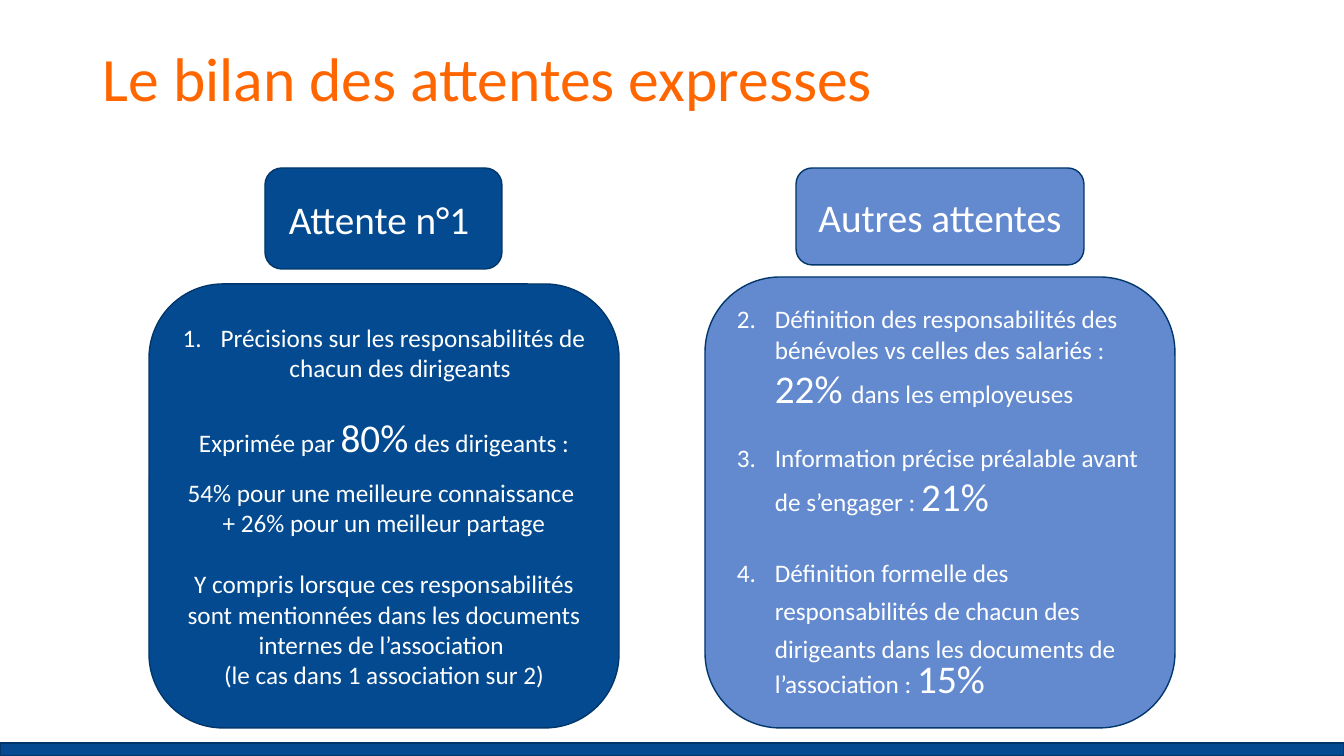
from dataclasses import dataclass

from lxml import etree
from pptx import Presentation
from pptx.dml.color import RGBColor
from pptx.enum.shapes import MSO_SHAPE
from pptx.enum.text import MSO_ANCHOR, PP_ALIGN
from pptx.oxml.ns import qn
from pptx.shapes.autoshape import Shape
from pptx.slide import Slide
from pptx.text.text import TextFrame
from pptx.util import Emu, Pt

EMU_PER_PX = 914400 / 100.8
RECT, ROUNDED = MSO_SHAPE.RECTANGLE, MSO_SHAPE.ROUNDED_RECTANGLE
LEFT, CENTER = PP_ALIGN.LEFT, PP_ALIGN.CENTER
MIDDLE = MSO_ANCHOR.MIDDLE

NAVY = RGBColor(0x03, 0x4A, 0x90)
OUTLINE = RGBColor(0x02, 0x37, 0x6B)
SKY = RGBColor(0x63, 0x8A, 0xCF)
ORANGE = RGBColor(0xFF, 0x66, 0x00)
WHITE = RGBColor(0xFF, 0xFF, 0xFF)

FONT = "Calibri"
BODY, LARGE, TITLE = 18, 28, 44
GAP, SMALL_GAP = 22, 12
NUMBER_INDENT = 38


@dataclass(frozen=True)
class Box:
    left: int
    top: int
    width: int
    height: int


@dataclass(frozen=True)
class Para:
    runs: tuple[tuple[str, int], ...]
    align: PP_ALIGN = CENTER
    before: int = 0
    spacing: float | Pt | None = None
    start: int = 0  # first number of the list, 0 for plain text


@dataclass(frozen=True)
class Panel:
    box: Box
    fill: RGBColor
    paras: tuple[Para, ...] = ()
    kind: MSO_SHAPE = ROUNDED


def px(length: int) -> Emu:
    return Emu(round(length * EMU_PER_PX))


def place(box: Box) -> tuple[Emu, Emu, Emu, Emu]:
    return px(box.left), px(box.top), px(box.width), px(box.height)


def number(paragraph, start: int) -> None:
    """Turn a paragraph into an item of a numbered list."""
    properties = paragraph._p.get_or_add_pPr()
    properties.set("marL", str(px(NUMBER_INDENT)))
    properties.set("indent", str(-px(NUMBER_INDENT)))
    bullet = etree.SubElement(properties, qn("a:buAutoNum"))
    bullet.set("type", "arabicPeriod")
    bullet.set("startAt", str(start))


def write(frame: TextFrame, paras: tuple[Para, ...], color: RGBColor) -> None:
    frame.word_wrap = True
    frame.vertical_anchor = MIDDLE
    for index, para in enumerate(paras):
        paragraph = frame.add_paragraph() if index else frame.paragraphs[0]
        layout = {"alignment": para.align, "space_before": Pt(para.before),
                  "line_spacing": para.spacing}
        for name, value in layout.items():
            setattr(paragraph, name, value)
        if para.start:
            number(paragraph, para.start)
        for text, size in para.runs:
            run = paragraph.add_run()
            run.text = text
            for name, value in {"name": FONT, "size": Pt(size)}.items():
                setattr(run.font, name, value)
            run.font.color.rgb = color


def draw_panel(slide: Slide, panel: Panel) -> Shape:
    shape = slide.shapes.add_shape(panel.kind, *place(panel.box))
    shape.shadow.inherit = False
    shape.fill.solid()
    shape.fill.fore_color.rgb = panel.fill
    shape.line.color.rgb = OUTLINE
    shape.line.width = Pt(1)
    write(shape.text_frame, panel.paras, WHITE)
    return shape


def draw_title(slide: Slide, box: Box, text: str) -> None:
    title = slide.shapes.add_textbox(*place(box))
    write(title.text_frame, (Para(((text, TITLE),), LEFT, spacing=0.9),), ORANGE)


FIRST_EXPECTATION = (
    Para((("Précisions sur les responsabilités de chacun des dirigeants ", BODY),), start=1),
    Para((("Exprimée par ", BODY), ("80%", LARGE), (" des dirigeants :", BODY)), before=GAP),
    Para((("54% pour une meilleure connaissance ", BODY),), before=SMALL_GAP),
    Para((("+ 26% pour un meilleur partage", BODY),)),
    Para((("Y compris lorsque ces responsabilités sont mentionnées dans les documents "
           "internes de l’association ", BODY),), before=GAP),
    Para((("(le cas dans 1 association sur 2)", BODY),)),
)

OTHER_EXPECTATIONS = (
    Para((("Définition des responsabilités des bénévoles vs celles des salariés : ", BODY),
          ("22% ", LARGE), ("dans les employeuses", BODY)), LEFT, start=2),
    Para((("Information précise préalable avant de s’engager : ", BODY), ("21%", LARGE)),
         LEFT, GAP, start=2),
    Para((("Définition formelle des responsabilités de chacun des dirigeants dans les "
           "documents de l’association : ", BODY), ("15%", LARGE)),
         LEFT, GAP, Pt(27), start=2),
)

PANELS = (
    # Footer bar
    Panel(Box(0, 743, 1344, 13), NAVY, kind=RECT),
    # First expectation
    Panel(Box(149, 284, 470, 444), NAVY, FIRST_EXPECTATION),
    Panel(Box(265, 168, 237, 101), NAVY, (Para((("Attente n°1 ", LARGE),)),)),
    # Other expectations
    Panel(Box(796, 168, 288, 97), SKY, (Para((("Autres attentes", LARGE),)),)),
    Panel(Box(705, 277, 470, 451), SKY, OTHER_EXPECTATIONS),
)


def main() -> None:
    deck = Presentation()
    deck.slide_width, deck.slide_height = px(1344), px(756)
    slide = deck.slides.add_slide(deck.slide_layouts[6])
    draw_title(slide, Box(93, 9, 1159, 146), "Le bilan des attentes expresses")
    for panel in PANELS:
        draw_panel(slide, panel)
    deck.save("out.pptx")


if __name__ == "__main__":
    main()
